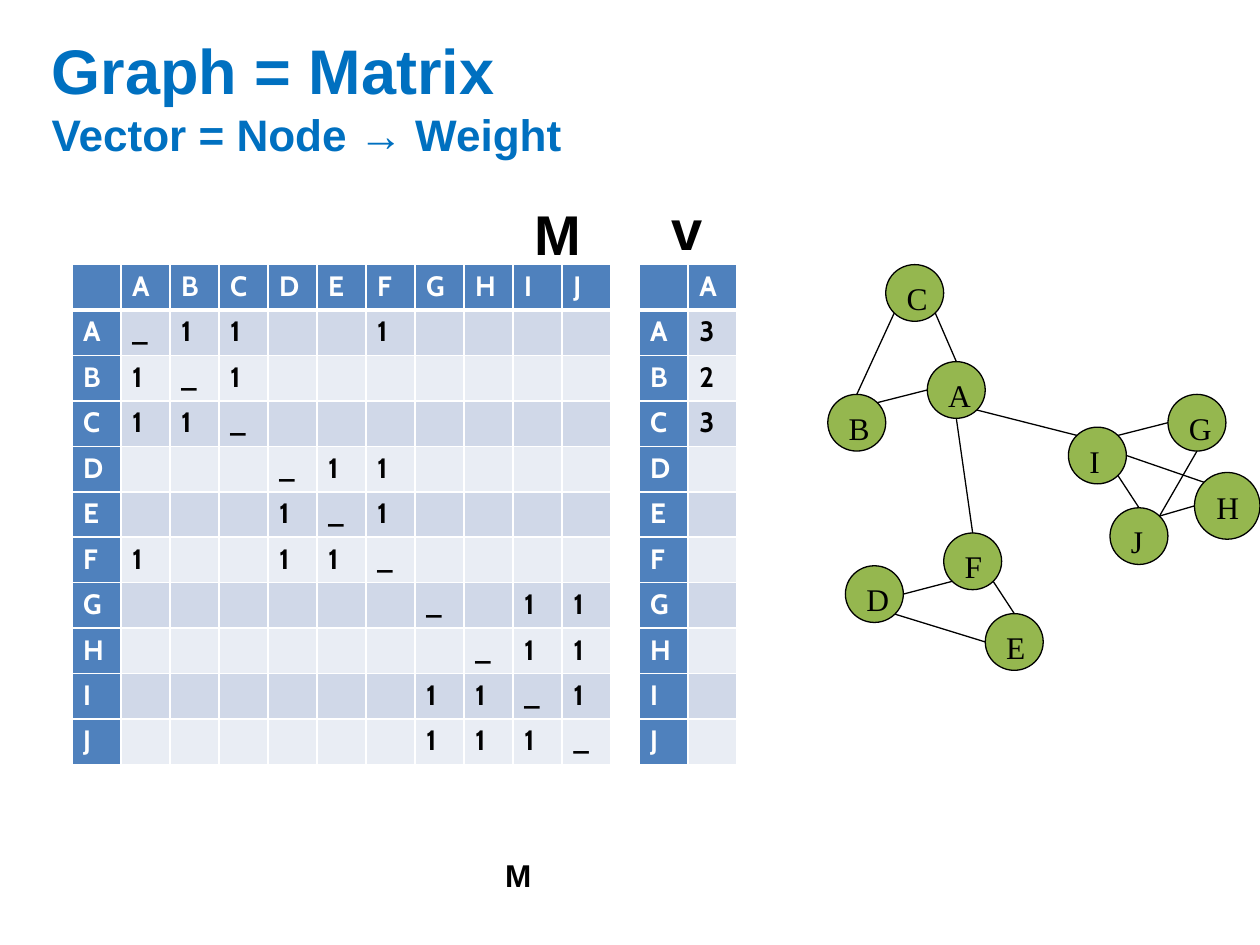
from dataclasses import dataclass

from lxml import etree
from pptx import Presentation
from pptx import util as u
from pptx.dml.color import RGBColor
from pptx.enum import shapes, text
from pptx.oxml.ns import qn

Inches = u.Inches


@dataclass(frozen=True)
class Theme:
    title: str = "0070C0"
    head: str = "4F81BD"
    bands: tuple = ("D0D8E8", "E9EDF4")
    node: str = "95B74F"
    ink: str = "000000"
    paper: str = "FFFFFF"
    sans: str = "Arial"
    grid: str = "Cabin"
    serif: str = "Times New Roman"
    big: float = 36
    sub: float = 25.2
    name: float = 32
    cell: float = 16
    label: float = 18
    line: float = 0.75


T = Theme()
NODES = "ABCDEFGHIJ"
LINKS = "AB AC AF BC DE DF EF GI GJ HI HJ IJ".split()
WEIGHTS = {"A": "3", "B": "2", "C": "3"}

# Left, top and size of each circle, relative to the graph's box
ROUND = (0.46, 0.45)
SPOTS = {
    "H": (2.91, 1.65, 0.52, 0.53),
    "A": (0.79, 0.77, *ROUND),
    "B": (0, 1.03, *ROUND),
    "C": (0.46, 0, *ROUND),
    "F": (0.92, 2.13, *ROUND),
    "D": (0.14, 2.39, *ROUND),
    "E": (1.25, 2.77, *ROUND),
    "G": (2.7, 1.03, *ROUND),
    "I": (1.91, 1.29, *ROUND),
    "J": (2.24, 1.93, *ROUND),
}
# Each end is a node and the compass point where the line meets it
EDGES = [
    "B n C sw", "A w B ne", "A se I nw", "I e H nw", "G w I ne",
    "J n I se", "D e F sw", "F se E n", "A s F n", "J ne H w",
    "C se A n", "D se E w", "G s J ne",
]


def style(run, font, size, color, bold=False):
    run.font.name = font
    run.font.size = u.Pt(size)
    run.font.bold = bold
    run.font.color.rgb = RGBColor.from_string(color)


def paint(fill, color):
    fill.solid()
    fill.fore_color.rgb = RGBColor.from_string(color)


def pad(frame, x, y):
    frame.margin_left = frame.margin_right = Inches(x)
    frame.margin_top = frame.margin_bottom = Inches(y)


def set_title(slide, left, top, width, height):
    box = slide.shapes.title
    box.left, box.top = Inches(left), Inches(top)
    box.width, box.height = Inches(width), Inches(height)
    frame = box.text_frame
    frame.text = "Graph = Matrix\vVector = Node → Weight"
    frame.vertical_anchor = text.MSO_ANCHOR.MIDDLE
    frame.auto_size = text.MSO_AUTO_SIZE.NONE
    para = frame.paragraphs[0]
    para.alignment = text.PP_ALIGN.LEFT
    for run, size in zip(para.runs, (T.big, T.sub)):
        style(run, T.sans, size, T.title, True)


def add_name(slide, word, size, left, top, width, height, inset=0.09):
    box = slide.shapes.add_textbox(
        Inches(left), Inches(top), Inches(width), Inches(height))
    frame = box.text_frame
    frame.word_wrap = True
    pad(frame, inset, 0.04)
    frame.text = word
    style(frame.paragraphs[0].runs[0], T.sans, size, T.ink, True)


def add_rules(cell, base):
    """Draw the four white borders; they must come before the cell's fill."""
    props = cell._tc.get_or_add_tcPr()
    for tag, width in (("lnL", 1), ("lnR", 1), ("lnT", 1), ("lnB", base)):
        line = etree.SubElement(props, qn(f"a:{tag}"), w=str(u.Pt(width)))
        fill = etree.SubElement(line, qn("a:solidFill"))
        etree.SubElement(fill, qn("a:srgbClr"), val=T.paper)


def fill_cell(cell, word, row, head):
    add_rules(cell, 1 if row else 3)
    paint(cell.fill, T.head if head else T.bands[(row - 1) % 2])
    pad(cell, 0.09, 0.04)
    cell.text = word
    para = cell.text_frame.paragraphs[0]
    if word:
        style(para.runs[0], T.grid, T.cell, T.paper if head else T.ink, True)
    else:
        etree.SubElement(para._p, qn("a:endParaRPr"), sz=str(T.cell * 100))


def add_grid(slide, heads, value, left, top, width, height):
    """Build a table with one row per node; value(row, column) fills it."""
    count, wide = len(NODES) + 1, len(heads) + 1
    table = slide.shapes.add_table(
        count, wide, Inches(left), Inches(top),
        Inches(width), Inches(height)).table
    table.horz_banding = False
    for col in table.columns:
        col.width = Inches(width / wide)
    for row in table.rows:
        row.height = Inches(height / count)
    for r, side in enumerate(" " + NODES):
        for c, head in enumerate(" " + heads):
            edge = r == 0 or c == 0
            if edge:
                word = (head if r == 0 else side).strip()
            else:
                word = value(side, head)
            fill_cell(table.cell(r, c), word, r, edge)


def link_mark(row, col):
    if row == col:
        return "_"
    return "1" if "".join(sorted(row + col)) in LINKS else ""


def find_port(node, side, left, top):
    """Point on a node's rim in the compass direction given."""
    x, y, width, height = SPOTS[node]
    reach = 0.5 if len(side) == 1 else 0.5 * 0.5 ** 0.5
    across = ("e" in side) - ("w" in side)
    down = ("s" in side) - ("n" in side)
    return (Inches(left + x + width * (0.5 + reach * across)),
            Inches(top + y + height * (0.5 + reach * down)))


def add_node(group, name, left, top, width, height):
    dot = group.shapes.add_shape(
        shapes.MSO_SHAPE.OVAL, Inches(left), Inches(top),
        Inches(width), Inches(height))
    dot.shadow.inherit = False
    paint(dot.fill, T.node)
    paint(dot.line.fill, T.ink)
    dot.line.width = u.Pt(T.line)
    frame = dot.text_frame
    frame.vertical_anchor = text.MSO_ANCHOR.TOP
    pad(frame, 0.1, 0.05)
    frame.text = name
    para = frame.paragraphs[0]
    para.alignment = text.PP_ALIGN.LEFT
    style(para.runs[0], T.serif, T.label, T.ink)


def add_graph(slide, left, top):
    group = slide.shapes.add_group_shape()
    for name, (x, y, width, height) in SPOTS.items():
        add_node(group, name, left + x, top + y, width, height)
    for edge in EDGES:
        start, out, end, into = edge.split()
        line = group.shapes.add_connector(
            shapes.MSO_CONNECTOR.STRAIGHT,
            *find_port(start, out, left, top),
            *find_port(end, into, left, top))
        paint(line.line.fill, T.ink)
        line.line.width = u.Pt(T.line)
        etree.SubElement(line._element.spPr, qn("a:effectLst"))


def main():
    deck = Presentation()
    deck.slide_width, deck.slide_height = Inches(10), Inches(7.5)
    slide = deck.slides.add_slide(deck.slide_layouts[5])
    set_title(slide, 0.31, 0.32, 9.46, 0.88)
    add_grid(slide, NODES, link_mark, 0.57, 2.1, 4.28, 3.97)
    add_graph(slide, 6.57, 2.1)
    add_grid(slide, "A", lambda row, col: WEIGHTS.get(row, ""),
             5.07, 2.1, 0.78, 3.97)
    add_name(slide, "M", T.label, 4.01, 6.75, 0.22, 0.39, inset=0)
    add_name(slide, "M", T.name, 4.15, 1.54, 0.56, 0.63)
    add_name(slide, "v", T.name, 5.24, 1.5, 0.43, 0.63)
    deck.save("out.pptx")


if __name__ == "__main__":
    main()
